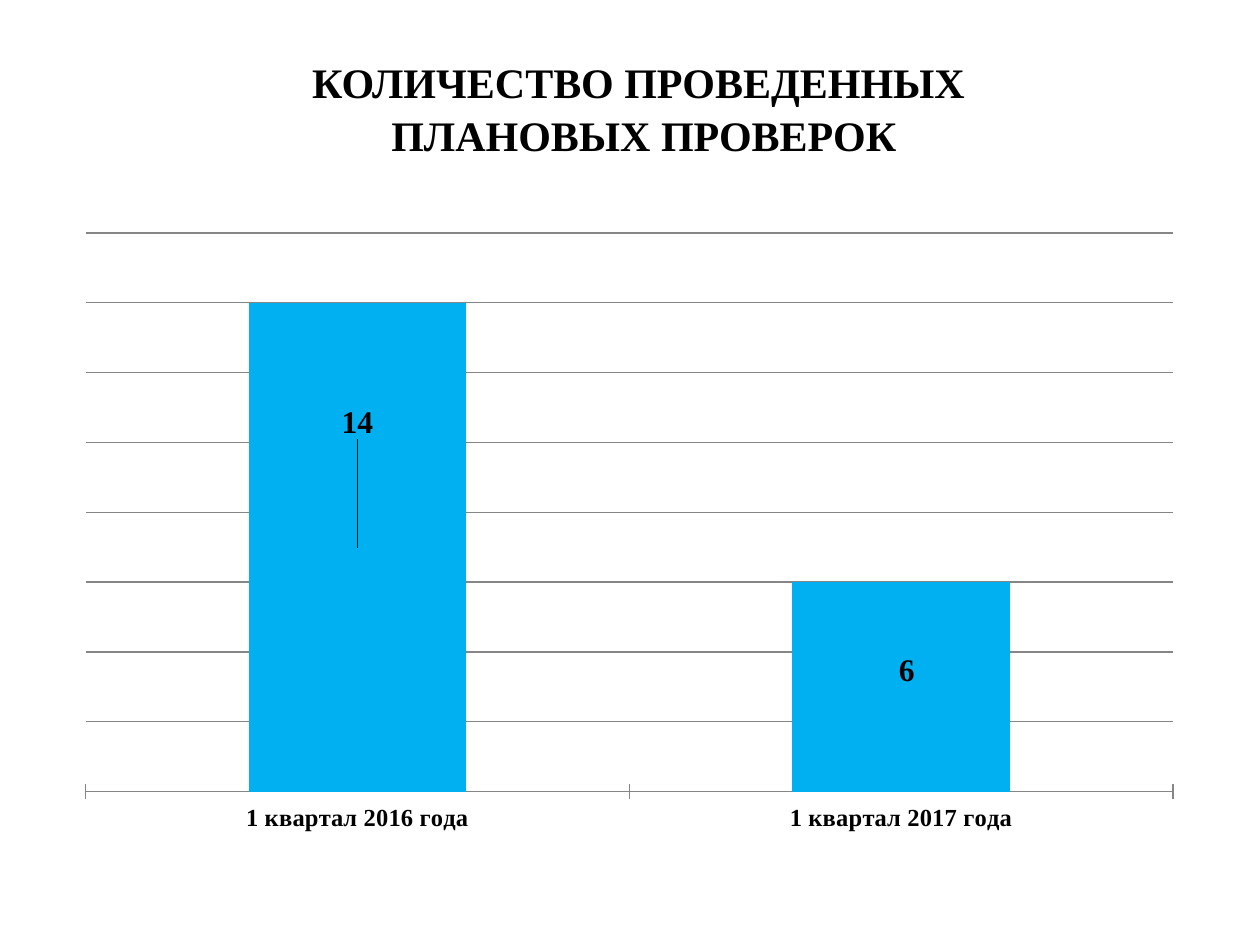
from lxml import etree
from pptx import Presentation
from pptx.chart.data import CategoryChartData
from pptx.dml.color import RGBColor
from pptx.enum.chart import XL_CHART_TYPE as ChartType
from pptx.enum.chart import XL_LABEL_POSITION as LabelPosition
from pptx.enum.chart import XL_TICK_MARK as TickMark
from pptx.enum.text import MSO_ANCHOR as Anchor
from pptx.enum.text import PP_ALIGN as Align
from pptx.oxml.ns import qn
from pptx.util import Inches, Pt

# Content
TITLE = "КОЛИЧЕСТВО ПРОВЕДЕННЫХ \vПЛАНОВЫХ ПРОВЕРОК"
INSPECTIONS = {"1 квартал 2016 года": 14, "1 квартал 2017 года": 6}
LABEL_SHIFTS = [(0, -0.2), (0.005, -0.025)]  # fractions of the chart size
PLOT_AREA = {"x": 0.02, "y": 0.02, "w": 0.96, "h": 0.896}
SERIF = "Times New Roman"
BLACK, GRAY, BLUE = "000000", "868686", "00B0F0"


def color(value):
    return RGBColor.from_string(value)


def style_font(font, size, name=SERIF, bold=True):
    font.name, font.size, font.bold = name, Pt(size), bold
    font.color.rgb = color(BLACK)


def add_text(page, text, at, size, align=Align.CENTER, spacing=1.0):
    box = page.shapes.add_textbox(*map(Inches, at))
    frame = box.text_frame
    frame.word_wrap = True
    frame.vertical_anchor = Anchor.MIDDLE
    para = frame.paragraphs[0]
    para.alignment, para.line_spacing = align, spacing
    span_text = text.split("\v")
    for index, line in enumerate(span_text):
        if index:
            para.add_line_break()
        span = para.add_run()
        span.text = line
        style_font(span.font, size)


def manual_layout(**values):
    layout = etree.Element(qn("c:layout"))
    manual = etree.SubElement(layout, qn("c:manualLayout"))
    for tag, value in values.items():
        etree.SubElement(manual, qn(f"c:{tag}")).set("val", str(value))
    return layout


def add_inspection_chart(page):
    data = CategoryChartData()
    data.categories = list(INSPECTIONS)
    data.add_series("Series 1", list(INSPECTIONS.values()))
    at = map(Inches, (0.5, 1.75, 8.99, 4.95))
    chart = page.shapes.add_chart(ChartType.COLUMN_CLUSTERED, *at, data).chart
    chart.has_legend = chart.has_title = False
    style_font(chart.font, 10, name="Arial", bold=False)

    # Axes and gridlines
    categories, values = chart.category_axis, chart.value_axis
    categories.major_tick_mark = TickMark.CROSS
    categories.format.line.color.rgb = color(GRAY)
    style_font(categories.tick_labels.font, 14)
    values.visible = False
    values.minimum_scale, values.maximum_scale, values.major_unit = 0, 16, 2
    values.major_gridlines.format.line.color.rgb = color(GRAY)

    # Columns and shifted value labels
    plot = chart.plots[0]
    plot.gap_width, plot.vary_by_categories = 150, False
    series = plot.series[0]
    series.format.fill.solid()
    series.format.fill.fore_color.rgb = color(BLUE)
    for index in range(len(INSPECTIONS)):
        label = series.points[index].data_label
        style_font(label.font, 18)
        label.position = LabelPosition.CENTER
    root = plot._element.getroottree().getroot()
    for label, (x, y) in zip(root.iter(qn("c:dLbl")), LABEL_SHIFTS):
        label.find(qn("c:idx")).addnext(manual_layout(x=x, y=y))

    # Fixed plot area
    area = root.find(".//" + qn("c:plotArea"))
    for layout in area.findall(qn("c:layout")):
        area.remove(layout)
    area.insert(0, manual_layout(layoutTarget="inner", xMode="edge",
                                 yMode="edge", **PLOT_AREA))


def main():
    deck = Presentation()
    deck.slide_width, deck.slide_height = Inches(10), Inches(7.5)
    page = deck.slides.add_slide(deck.slide_layouts[6])
    add_text(page, TITLE, (0.5, 0.3, 9.22, 1.09), 24, spacing=1.06)
    add_inspection_chart(page)
    deck.save("out.pptx")


if __name__ == "__main__":
    main()
